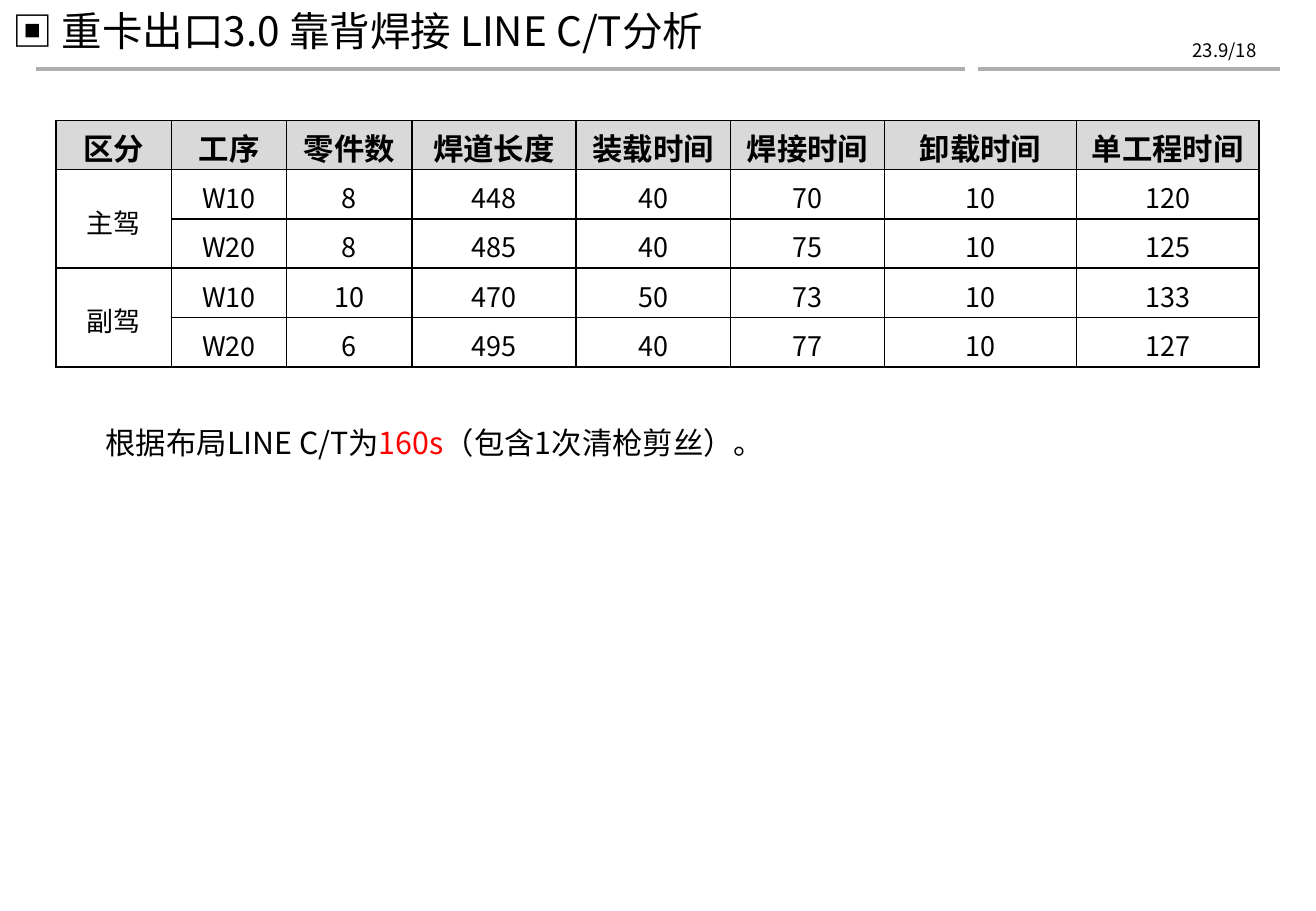
from lxml.etree import SubElement
from pptx import Presentation
from pptx.dml.color import RGBColor
from pptx.enum.shapes import MSO_CONNECTOR
from pptx.enum.text import MSO_ANCHOR, MSO_AUTO_SIZE, PP_ALIGN
from pptx.oxml.ns import qn
from pptx.util import Inches, Pt

WIDTH, HEIGHT = 10.83, 7.5
SC, KR = "Noto Sans CJK SC", "Noto Sans CJK KR"
COLUMNS = [0.95, 0.95, 1.03, 1.35, 1.27, 1.27, 1.58, 1.5]
HEADER = ["区分", "工序", "零件数", "焊道长度", "装载时间", "焊接时间", "卸载时间", "单工程时间"]
SEATS = {
    "主驾": [["W10", 8, 448, 40, 70, 10, 120], ["W20", 8, 485, 40, 75, 10, 125]],
    "副驾": [["W10", 10, 470, 50, 73, 10, 133], ["W20", 6, 495, 40, 77, 10, 127]],
}


def color(value):
    """Turn a hex string into a colour."""
    return RGBColor.from_string(value)


def style(p, size, name=SC, bold=False, align=PP_ALIGN.LEFT):
    """Set the font and alignment of a paragraph."""
    p.alignment = align
    p.font.size, p.font.bold, p.font.name = Pt(size), bold, name
    p.font.color.rgb = color("000000")
    SubElement(p._p.pPr.find(qn("a:defRPr")), qn("a:ea"), typeface=name)


def add_text(slide, box, runs, size, name=SC, align=PP_ALIGN.LEFT):
    """Add a text box made of (text, colour) runs."""
    tf = slide.shapes.add_textbox(*map(Inches, box)).text_frame
    tf.word_wrap = True
    p = tf.paragraphs[0]
    for text, hue in runs:
        r = p.add_run()
        r.text = text
        if hue:
            r.font.color.rgb = color(hue)
    style(p, size, name, align=align)


def add_heading(slide, left, top, width, height):
    """Place the title, the date and the two rules in the heading band."""
    title = slide.shapes.title
    title.left, title.top = Inches(left), Inches(top)
    title.width, title.height = Inches(width * 0.84), Inches(height * 0.88)
    tf = title.text_frame
    tf.text = "▣ 重卡出口3.0 靠背焊接 LINE C/T分析"
    tf.auto_size = MSO_AUTO_SIZE.NONE
    tf.vertical_anchor = MSO_ANCHOR.TOP
    style(tf.paragraphs[0], 24)
    bottom = Inches(top + height)
    for start, end in [(0.3, 7.94), (8.05, 10.53)]:
        line = slide.shapes.add_connector(
            MSO_CONNECTOR.STRAIGHT, Inches(left + start), bottom, Inches(left + end), bottom)
        line.line.color.rgb = color("AEAEAE")
        line.line.width = Pt(2)
        SubElement(line._element.spPr, qn("a:effectLst"))
    add_text(slide, (left + 9.35, top + 0.27, 1.09, 0.29), [("23.9/18", None)],
             11, KR, PP_ALIGN.RIGHT)


def add_borders(cell):
    """Draw a thin black border on every side of a cell."""
    tcPr = cell._tc.get_or_add_tcPr()
    for i, side in enumerate(["lnL", "lnR", "lnT", "lnB"]):
        ln = SubElement(tcPr, qn(f"a:{side}"), w=str(Pt(1)))
        SubElement(SubElement(ln, qn("a:solidFill")), qn("a:srgbClr"), val="000000")
        tcPr.remove(ln)
        tcPr.insert(i, ln)


def fill_cell(cell, text, header):
    """Write and format one cell of the table."""
    cell.margin_top, cell.margin_bottom = Inches(0.04), 0
    cell.text = str(text)
    style(cell.text_frame.paragraphs[0], 18 if header else 16,
          bold=header, align=PP_ALIGN.CENTER)
    if header:
        cell.fill.solid()
        cell.fill.fore_color.rgb = color("D9D9D9")
    else:
        cell.fill.background()
        cell.vertical_anchor = MSO_ANCHOR.MIDDLE
    add_borders(cell)


def add_times(slide, left, top, width, height):
    """Add the table of cycle times per seat and process."""
    rows = [HEADER]
    for seat, processes in SEATS.items():
        for i, process in enumerate(processes):
            rows.append(["" if i else seat, *process])
    table = slide.shapes.add_table(
        len(rows), len(COLUMNS), *map(Inches, (left, top, width, height))).table
    for column, share in zip(table.columns, COLUMNS):
        column.width = Inches(width * share / sum(COLUMNS))
    for i, row in enumerate(rows):
        for j, text in enumerate(row):
            fill_cell(table.cell(i, j), text, i == 0)
    for i in range(1, len(rows), 2):
        table.cell(i, 0).merge(table.cell(i + 1, 0))


def main():
    """Build the slide and save it."""
    prs = Presentation()
    prs.slide_width, prs.slide_height = Inches(WIDTH), Inches(HEIGHT)
    slide = prs.slides.add_slide(prs.slide_layouts[5])
    add_heading(slide, 0, 0, WIDTH, 0.57)
    add_times(slide, 0.46, 0.99, 9.9, 2.03)
    add_text(slide, (0.77, 3.44, 6.14, 0.4), [
        ("根据布局LINE C/T为", None), ("160s", "FF0000"), ("（包含1次清枪剪丝）。", None)], 18)
    prs.save("out.pptx")


if __name__ == "__main__":
    main()
